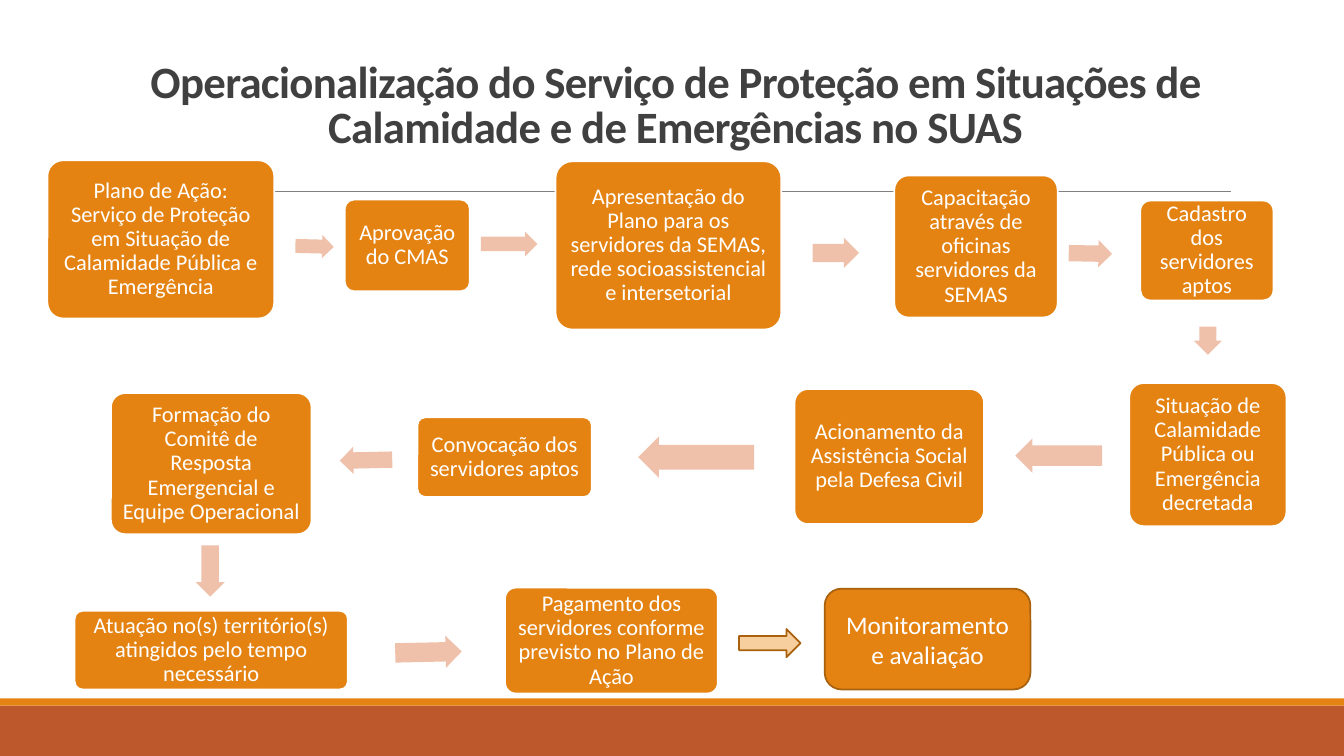
from dataclasses import dataclass

from lxml.etree import SubElement
from pptx import Presentation
from pptx.dml.color import RGBColor
from pptx.enum.shapes import MSO_CONNECTOR, MSO_SHAPE
from pptx.enum.text import MSO_ANCHOR, MSO_AUTO_SIZE, PP_ALIGN
from pptx.oxml.ns import qn
from pptx.util import Pt

PX = 9144  # 100 px to the inch
WIDTH, HEIGHT = 1333, 750


@dataclass(frozen=True)
class Theme:
    font: str = "Calibri"
    title_size: int = 32
    step_size: int = 16
    final_size: int = 18
    title: str = "404040"
    white: str = "FFFFFF"
    orange: str = "E48312"
    outline: str = "A9610D"
    rust: str = "BD582C"
    arrow: str = "EFC1AB"
    final_arrow: str = "F7CE9D"
    rule: str = "808080"


THEME = Theme()

TITLE = ("Operacionalização do Serviço de Proteção em Situações de "
         "Calamidade e de Emergências no SUAS")

# Each row: its origin, steps (x, y, w, h, text) and arrows (x, y, w, h, rotation)
ROWS = [
    ((47, 159), [
        (0, 0, 225, 157, "Plano de Ação: Serviço de Proteção em Situação de "
                         "Calamidade Pública e Emergência"),
        (295, 39, 124, 91, "Aprovação do CMAS"),
        (504, 1, 224, 167, "Apresentação do Plano para os servidores da SEMAS, "
                           "rede socioassistencial e intersetorial"),
        (840, 15, 162, 141, "Capacitação através de oficinas servidores da SEMAS"),
        (1084, 40, 132, 99, "Cadastro dos servidores aptos"),
    ], [
        (246, 74, 38, 23, 1.4),
        (430, 71, 56, 24, 0),
        (759, 77, 46, 30, 0),
        (1013, 79, 43, 27, 1),
        (1137, 165, 28, 28, 90),
    ]),
    ((110, 380), [
        (1010, 0, 156, 142, "Situação de Calamidade Pública ou Emergência decretada"),
        (678, 6, 188, 134, "Acionamento da Assistência Social pela Defesa Civil"),
        (304, 34, 173, 79, "Convocação dos servidores aptos"),
        (0, 10, 199, 140, "Formação do Comitê de Resposta Emergencial e "
                          "Equipe Operacional"),
    ], [
        (897, 55, 86, 34, 180),
        (523, 53, 115, 41, 180),
        (227, 63, 52, 27, 178.8),
        (73, 172, 51, 29, 90),
    ]),
    ((74, 583), [
        (0, 23, 271, 78, "Atuação no(s) território(s) atingidos pelo tempo necessário"),
        (427, 0, 211, 105, "Pagamento dos servidores conforme previsto no "
                           "Plano de Ação"),
    ], [
        (318, 48, 66, 32, 358.7),
    ]),
]


def rgb(value):
    return RGBColor.from_string(value)


def emu(*lengths):
    return [n * PX for n in lengths]


def add_filled(s, kind, box, fill, line=None, adjustments=()):
    sp = s.shapes.add_shape(kind, *emu(*box))
    sp.shadow.inherit = False
    sp.fill.solid()
    sp.fill.fore_color.rgb = rgb(fill)
    if line:
        sp.line.color.rgb = rgb(line)
        sp.line.width = Pt(1.25)
    else:
        sp.line.fill.background()
    for i, value in enumerate(adjustments):
        sp.adjustments[i] = value
    return sp


def write(sp, text, size, color, spacing, margin, anchor=MSO_ANCHOR.MIDDLE, bold=False):
    tf = sp.text_frame
    frame = {"word_wrap": True, "auto_size": MSO_AUTO_SIZE.NONE, "vertical_anchor": anchor}
    frame.update({f"margin_{side}": margin * PX for side in ("left", "right", "top", "bottom")})
    p = tf.paragraphs[0]
    r = p.add_run()
    r.text = text
    for target, values in (
        (tf, frame),
        (p, {"alignment": PP_ALIGN.CENTER, "line_spacing": spacing}),
        (r.font, {"name": THEME.font, "size": Pt(size), "bold": bold}),
    ):
        for name, value in values.items():
            setattr(target, name, value)
    r.font.color.rgb = rgb(color)
    return r


def add_backdrop(s, x, y, w, h):
    add_filled(s, MSO_SHAPE.RECTANGLE, (x, y + h - 50, w, 50), THEME.rust)
    add_filled(s, MSO_SHAPE.RECTANGLE, (x, y + h - 57, w, 7), THEME.orange)
    rule = s.shapes.add_connector(MSO_CONNECTOR.STRAIGHT,
                                  *emu(x + 131, y + 190, x + 1221, y + 190))
    rule.line.color.rgb = rgb(THEME.rule)
    rule.line.width = Pt(0.5)
    SubElement(rule._element.spPr, qn("a:effectLst"))


def add_title(s, x, y, w, h):
    sp = s.shapes.title
    sp.left, sp.top, sp.width, sp.height = emu(x, y, w, h)
    r = write(sp, TITLE, THEME.title_size, THEME.title, 0.85, 5, MSO_ANCHOR.BOTTOM, True)
    r._r.get_or_add_rPr().set("spc", "-50")


def add_flow_row(s, x, y, steps, arrows):
    for dx, dy, w, h, text in steps:
        sp = add_filled(s, MSO_SHAPE.ROUNDED_RECTANGLE, (x + dx, y + dy, w, h),
                        THEME.orange, THEME.white, [0.1])
        write(sp, text, THEME.step_size, THEME.white, 0.9, 7)
    for dx, dy, w, h, rotation in arrows:
        sp = add_filled(s, MSO_SHAPE.RIGHT_ARROW, (x + dx, y + dy, w, h),
                        THEME.arrow, adjustments=[0.6, 0.5])
        sp.rotation = rotation


def add_final_step(s, x, y, w, h):
    """Place the outlined arrow and the closing step at the right of the box."""
    sp = add_filled(s, MSO_SHAPE.FLOWCHART_ALTERNATE_PROCESS, (x + w - 204, y, 204, h),
                    THEME.orange, THEME.outline)
    write(sp, "Monitoramento e avaliação", THEME.final_size, THEME.white, 1.0, 12)
    add_filled(s, MSO_SHAPE.RIGHT_ARROW, (x, y + 40, 61, 28),
               THEME.final_arrow, THEME.outline)


def main():
    prs = Presentation()
    prs.slide_width, prs.slide_height = emu(WIDTH, HEIGHT)
    s = prs.slides.add_slide(prs.slide_layouts[5])
    add_backdrop(s, 0, 0, WIDTH, HEIGHT)
    add_title(s, 120, 21, 1100, 136)
    for (x, y), steps, arrows in ROWS:
        add_flow_row(s, x, y, steps, arrows)
    add_final_step(s, 733, 584, 289, 100)
    prs.save("out.pptx")


if __name__ == "__main__":
    main()
